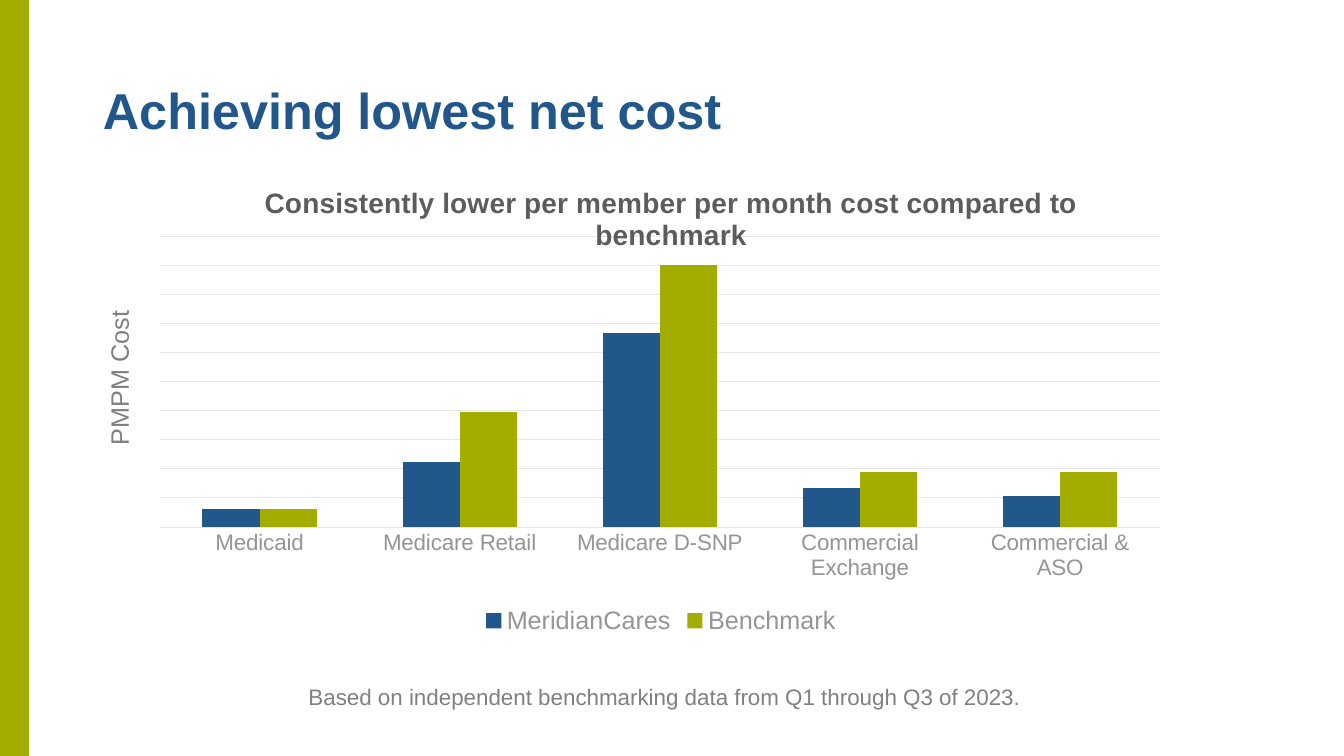
from lxml import etree
from pptx import Presentation
from pptx.chart.data import CategoryChartData
from pptx.dml.color import RGBColor
from pptx.enum.chart import XL_CHART_TYPE, XL_LEGEND_POSITION, XL_TICK_MARK
from pptx.enum.shapes import MSO_SHAPE
from pptx.enum.text import MSO_ANCHOR, PP_ALIGN
from pptx.oxml.ns import qn
from pptx.util import Pt

COLUMNS = XL_CHART_TYPE.COLUMN_CLUSTERED
LEGEND_BOTTOM = XL_LEGEND_POSITION.BOTTOM
NO_TICKS = XL_TICK_MARK.NONE
RECTANGLE = MSO_SHAPE.RECTANGLE
MIDDLE = MSO_ANCHOR.MIDDLE
CENTER = PP_ALIGN.CENTER

PX = 9144  # EMU per px, 100 px to the inch
FONT = "Arial"
COLORS = {
    "blue": "21578A",
    "green": "A2AD00",
    "heading": "5D5B5B",
    "label": "969494",
    "note": "808080",
    "grid": "E7E6E6",
}


def style_font(font, size, color, bold=False):
    font.name = FONT
    font.size = Pt(size)
    font.bold = bold
    font.color.rgb = RGBColor.from_string(COLORS[color])


def set_layout(parent, position, settings):
    for old_layout in parent.findall(qn("c:layout")):
        parent.remove(old_layout)
    layout = etree.Element(qn("c:layout"))
    manual = etree.SubElement(layout, qn("c:manualLayout"))
    for name, value in settings.items():
        etree.SubElement(manual, qn(f"c:{name}")).set("val", str(value))
    parent.insert(position, layout)


presentation = Presentation()
presentation.slide_width = 1333 * PX
presentation.slide_height = 750 * PX
slide = presentation.slides.add_slide(presentation.slide_layouts[5])

# Green side bar
side_bar = slide.shapes.add_shape(RECTANGLE, 0, 0, 29 * PX, 750 * PX)
side_bar.shadow.inherit = False
side_bar.fill.solid()
side_bar.fill.fore_color.rgb = RGBColor.from_string(COLORS["green"])
side_bar.line.fill.background()

# Title
title = slide.shapes.title
title.left, title.top, title.width, title.height = 92 * PX, 40 * PX, 1150 * PX, 145 * PX
title.text_frame.vertical_anchor = MIDDLE
title.text_frame.word_wrap = True
paragraph = title.text_frame.paragraphs[0]
paragraph.alignment = PP_ALIGN.LEFT
paragraph.line_spacing = 0.9
run = paragraph.add_run()
run.text = "Achieving lowest net cost"
style_font(run.font, 36, "blue", bold=True)

# Cost chart
chart_data = CategoryChartData()
chart_data.categories = [
    "Medicaid", "Medicare Retail", "Medicare D-SNP",
    "Commercial Exchange", "Commercial & ASO",
]
chart_data.add_series("MeridianCares", [7, 25, 74, 15, 12])
chart_data.add_series("Benchmark", [7, 44, 100, 21, 21])
chart = slide.shapes.add_chart(
    COLUMNS, 145 * PX, 174 * PX, 1021 * PX, 461 * PX, chart_data).chart
style_font(chart.font, 10, "heading")

plot = chart.plots[0]
plot.vary_by_categories = False
plot.gap_width = 150
plot.overlap = 0
for series, color in zip(plot.series, ["blue", "green"]):
    series.format.fill.solid()
    series.format.fill.fore_color.rgb = RGBColor.from_string(COLORS[color])

# Chart heading
chart.has_title = True
run = chart.chart_title.text_frame.paragraphs[0].add_run()
run.text = "Consistently lower per member per month cost compared to benchmark"
style_font(run.font, 20, "heading", bold=True)

# Axes and gridlines
category_axis = chart.category_axis
category_axis.major_tick_mark = NO_TICKS
style_font(category_axis.tick_labels.font, 16, "label")
value_axis = chart.value_axis
value_axis.visible = False
value_axis.minimum_scale = 0
value_axis.maximum_scale = 111.1
value_axis.major_unit = 11.11
value_axis.has_major_gridlines = True
for line in (category_axis.format.line, value_axis.major_gridlines.format.line):
    line.color.rgb = RGBColor.from_string(COLORS["grid"])
    line.width = Pt(0.75)

# Legend
chart.has_legend = True
chart.legend.position = LEGEND_BOTTOM
chart.legend.include_in_layout = False
style_font(chart.legend.font, 18, "label")

# Heading and plot positions as fractions of the chart
chart_title = chart._chartSpace.find(".//" + qn("c:title"))
plot_area = chart._chartSpace.find(".//" + qn("c:plotArea"))
set_layout(chart_title, 1, {"xMode": "edge", "yMode": "edge", "x": 0.11, "y": 0.01})
set_layout(plot_area, 0, {
    "layoutTarget": "inner", "xMode": "edge", "yMode": "edge",
    "x": 0.013, "y": 0.131, "w": 0.972, "h": 0.626,
})

# Source note and rotated axis caption
captions = [
    ("Based on independent benchmarking data from Q1 through Q3 of 2023.",
     (289, 673, 740, 37), 16, 0),
    ("PMPM Cost", (-28, 355, 292, 40), 18, 270),
]
for text, box, size, rotation in captions:
    caption = slide.shapes.add_textbox(*(length * PX for length in box))
    caption.rotation = rotation
    caption.text_frame.word_wrap = True
    paragraph = caption.text_frame.paragraphs[0]
    paragraph.alignment = CENTER
    run = paragraph.add_run()
    run.text = text
    style_font(run.font, size, "note")

presentation.save("out.pptx")
